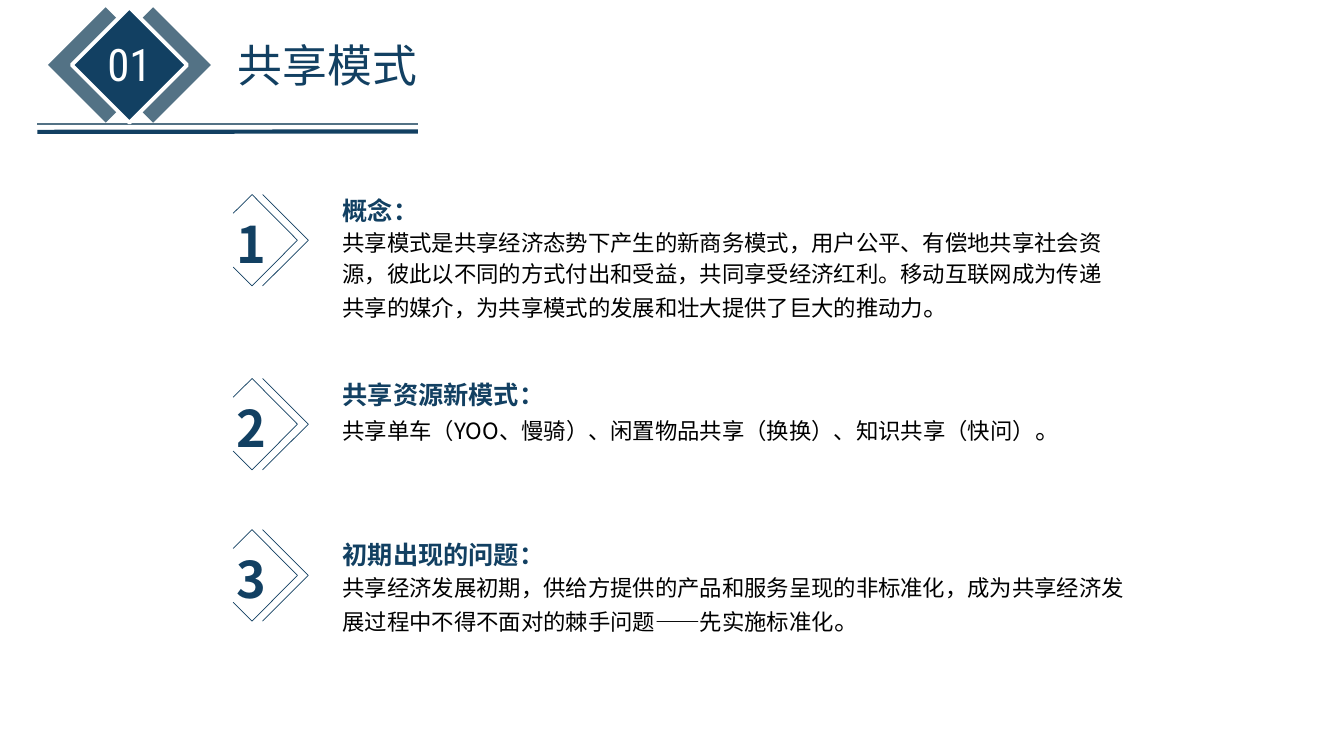
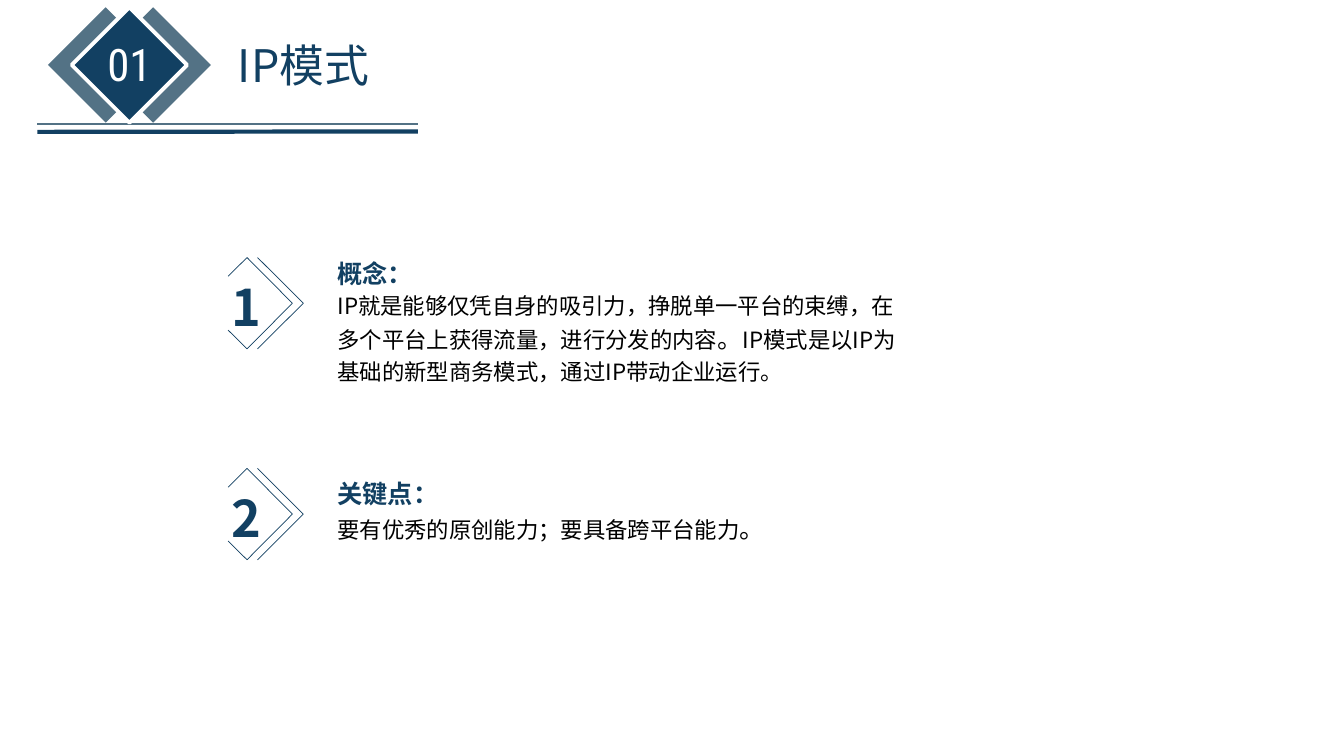
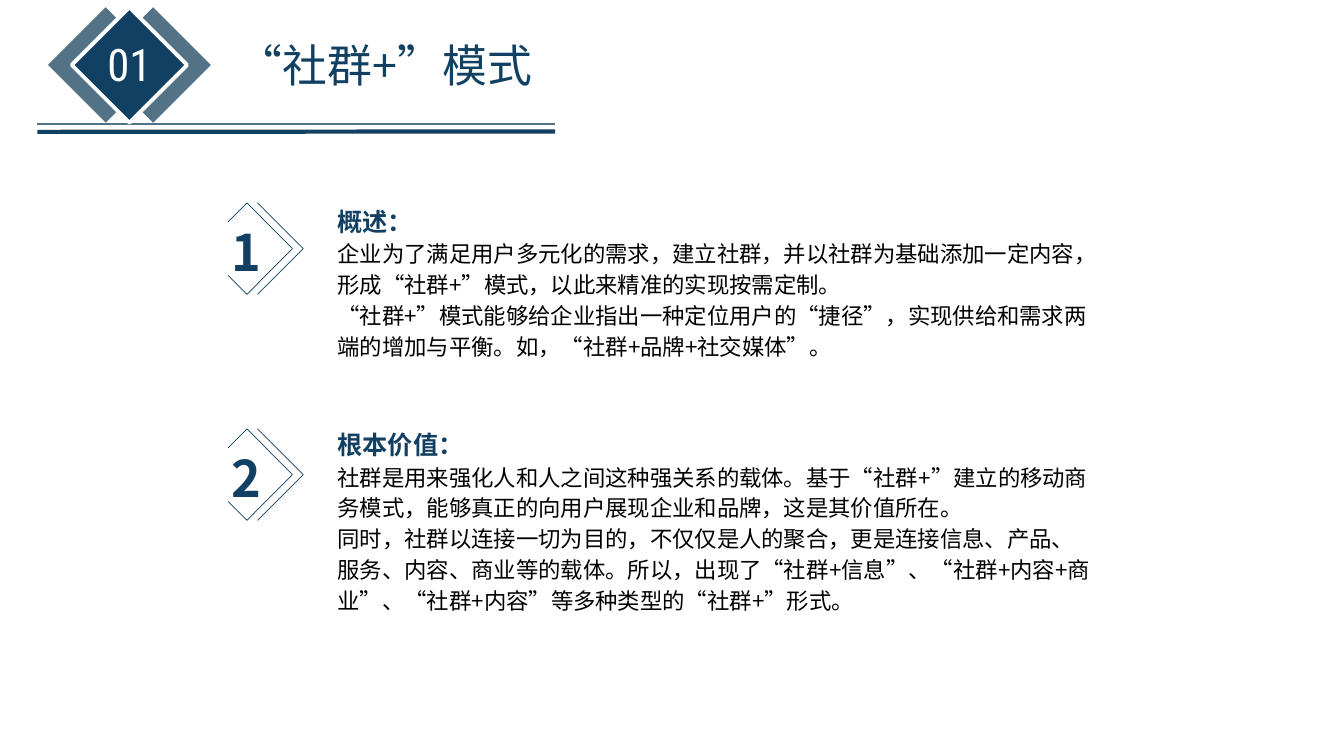
from lxml.etree import SubElement
from pptx import Presentation
from pptx.dml.color import RGBColor
from pptx.enum.lang import MSO_LANGUAGE_ID
from pptx.enum.shapes import MSO_CONNECTOR, MSO_SHAPE
from pptx.enum.text import MSO_ANCHOR, MSO_AUTO_SIZE, PP_ALIGN
from pptx.oxml.ns import qn
from pptx.util import Inches, Pt

NAVY = RGBColor(0x12, 0x40, 0x62)
SLATE = RGBColor(0x53, 0x72, 0x85)
WHITE = RGBColor(0xFF, 0xFF, 0xFF)
BLACK = RGBColor(0, 0, 0)
SANS = "Noto Sans CJK SC"
SLIM = "Roboto Condensed"

deck = Presentation()
deck.slide_width = Inches(13.33)
deck.slide_height = Inches(7.5)
CELL = deck.slide_height / 90  # square grid, 160 columns by 90 rows


def write(shape, box, paras, face=SANS, align=PP_ALIGN.LEFT, space=None):
    """Place a text shape on the grid; each paragraph is a list of
    (text, size, colour, bold) runs."""
    shape.left, shape.top, shape.width, shape.height = [int(n * CELL) for n in box]
    frame = shape.text_frame
    frame.word_wrap = True
    frame.auto_size = MSO_AUTO_SIZE.SHAPE_TO_FIT_TEXT
    frame.vertical_anchor = MSO_ANCHOR.TOP
    for i, runs in enumerate(paras):
        para = frame.add_paragraph() if i else frame.paragraphs[0]
        para.alignment = align
        if space:
            para.line_spacing = space
        for text, size, color, bold in runs:
            run = para.add_run()
            run.text = text
            font = run.font
            font.size, font.bold, font.name = Pt(size), bold, face
            font.color.rgb = color
            font.language_id = MSO_LANGUAGE_ID.SIMPLIFIED_CHINESE
            SubElement(run._r.get_or_add_rPr(), qn("a:ea")).set("typeface", face)


def draw(slide, ends, color, width):
    """Draw a straight line between two grid points (x1, y1, x2, y2)."""
    line = slide.shapes.add_connector(
        MSO_CONNECTOR.STRAIGHT, *[int(n * CELL) for n in ends])
    line.line.color.rgb = color
    line.line.width = Pt(width)
    SubElement(line._element.spPr, qn("a:effectLst"))


# Badge: centre, side of a diamond, and sideways shift of the two behind
MID_X, MID_Y, SIDE, SHIFT = 15.4, 7.74, 9.72, 2.82
RULE = 4.44

# Marker lines, as (x, y) from the left of the text and the marker's middle
MARK = []
for sign in (1, -1):
    MARK += [
        (-4.2, 0, -9.6, sign * 5.44),
        (-9.6, sign * 5.44, -11.85, sign * 3.2),
        (-2.9, 0, -8.35, sign * 5.44),
    ]

# Slide: title, end of the rules, left of the text, items.
# Item: middle of the marker, top and width of the text, heading, paragraphs.
# A paragraph is a list of (text, size).
PAGES = [
    ("共享模式", 49.74, 39.6, [
        (28.6, 22.1, 93.7, "概念：", [[
            ("共享模式是共享经济态势下产生的新商务模式，用户公平、有偿地共享社会资源，"
             "彼此以不同的方式付出和受益，共同享受经济红利。移动互联网成为传递共享的媒介，"
             "为共享模式的发展和壮大提供了巨大的推动力", 16), ("。", 18)]]),
        (50.5, 44, 102, "共享资源新模式：", [[
            ("共享单车（YOO、慢骑）、闲置物品共享（换换）、知识共享（快问）", 16),
            ("。", 18)]]),
        (68.5, 63.1, 95.6, "初期出现的问题：", [[
            ("共享经济发展初期，供给方提供的产品和服务呈现的非标准化，"
             "成为共享经济发展过程中不得不面对的棘手问题——先实施标准化", 16),
            ("。", 18)]]),
    ]),
    ("IP模式", 49.74, 39, [
        (36.1, 29.6, 71.3, "概念：", [[
            ("IP就是能够仅凭自身的吸引力，挣脱单一平台的束缚，"
             "在多个平台上获得流量，进行分发的内容", 16), ("。", 18),
            ("IP模式是以IP为基础的新型商务模式，通过IP带动企业运行。", 16)]]),
        (61.2, 55.8, 65.3, "关键点：", [[
            ("要有优秀的原创能力；要具备跨平台能力", 16), ("。", 18)]]),
    ]),
    ("“社群+”模式", 66.06, 39, [
        (29.6, 23.4, 92.4, "概述：", [
            [("企业为了满足用户多元化的需求，建立社群，并以社群为基础添加一定内容，"
              "形成“社群+”模式，以此来精准的实现按需定制。", 16)],
            [("“社群+”模式能够给企业指出一种定位用户的“捷径”，"
              "实现供给和需求两端的增加与平衡。如，“社群+品牌+社交媒体”。", 16)]]),
        (56.5, 50, 92.4, "根本价值：", [
            [("社群是用来强化人和人之间这种强关系的载体。基于“社群+”建立的移动商务模式，"
              "能够真正的向用户展现企业和品牌，这是其价值所在。", 16)],
            [("同时，社群以连接一切为目的，不仅仅是人的聚合，更是连接信息、产品、服务、"
              "内容、商业等的载体。所以，出现了“社群+信息”、“社群+内容+商业”、"
              "“社群+内容”等多种类型的“社群+”形式。", 16)]]),
    ]),
]

for title, end, left, items in PAGES:
    slide = deck.slides.add_slide(deck.slide_layouts[5])
    shapes = slide.shapes
    write(shapes.title, (27.12, 3.84, 53.3, 7.68), [[(title, 32, NAVY, False)]])

    draw(slide, (RULE, 14.76, end, 14.76), SLATE, 1)
    for shift, color in ((SHIFT, SLATE), (-SHIFT, SLATE), (0, NAVY)):
        x, y = MID_X + shift - SIDE / 2, MID_Y - SIDE / 2
        gem = shapes.add_shape(
            MSO_SHAPE.RECTANGLE, *[int(n * CELL) for n in (x, y, SIDE, SIDE)])
        gem.rotation = 45
        gem.shadow.inherit = False
        gem.fill.solid()
        gem.fill.fore_color.rgb = color
        gem.line.fill.background()
    gem.line.color.rgb = WHITE
    gem.line.width = Pt(2.75)
    write(shapes.add_textbox(0, 0, 0, 0), (11.4, 3.84, 8.04, 7.68),
          [[("01", 32, WHITE, False)]], SLIM, PP_ALIGN.CENTER)
    draw(slide, (RULE, 15.7, end, 15.65), NAVY, 3)

    for count, (mid, top, width, head, body) in enumerate(items, 1):
        for x1, y1, x2, y2 in MARK:
            draw(slide, (left + x1, mid + y1, left + x2, mid + y2), NAVY, 0.5)
        write(shapes.add_textbox(0, 0, 0, 0), (left - 12.6, mid - 3.84, 4.7, 8.5),
              [[(str(count), 36, NAVY, True)]])
        paras = [[(head, 18, NAVY, True)]]
        paras += [[(text, size, BLACK, False) for text, size in runs] for runs in body]
        rows = len(paras) * 4
        write(shapes.add_textbox(0, 0, 0, 0), (left, top, width, rows), paras, space=1.15)

deck.save("out.pptx")
